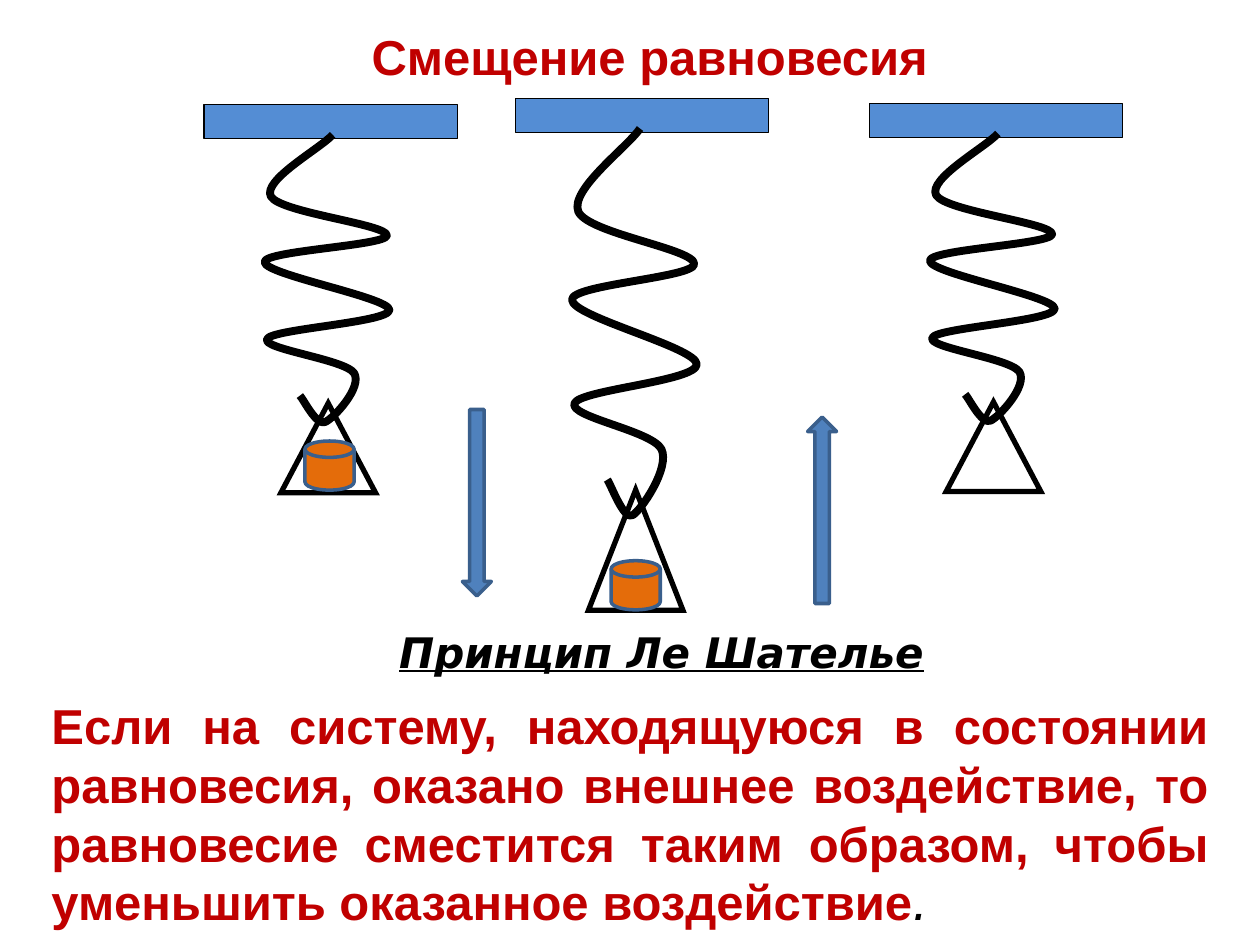
from dataclasses import dataclass

import lxml.etree
import pptx
import pptx.dml.color
import pptx.enum.shapes
import pptx.enum.text
import pptx.oxml.ns
import pptx.util

Inches = pptx.util.Inches
Pt = pptx.util.Pt
qn = pptx.oxml.ns.qn
SHAPE = pptx.enum.shapes.MSO_SHAPE
ALIGN = pptx.enum.text.PP_ALIGN
ANCHOR = pptx.enum.text.MSO_ANCHOR


@dataclass(frozen=True)
class Theme:
    accent: str = "C00000"
    ink: str = "000000"
    beam: str = "548DD4"
    load: str = "E46C0A"
    arrow: str = "4F81BD"
    edge: str = "3A5F8C"
    sans: str = "Arial"
    alternate: str = "DejaVu Sans"
    large: int = 28
    medium: int = 24


THEME = Theme()
SPRING_HEIGHT = 2.31
SPRING_START = (0.31, 2.07)
SPRING_CONTROLS = [
    (0.34, 2.10), (0.44, 2.31), (0.51, 2.28),
    (0.58, 2.25), (0.81, 2.00), (0.74, 1.89),
    (0.66, 1.78), (0.00, 1.70), (0.05, 1.62),
    (0.09, 1.54), (1.02, 1.49), (1.02, 1.39),
    (1.02, 1.29), (0.03, 1.11), (0.03, 1.01),
    (0.02, 0.92), (0.99, 0.88), (1.00, 0.80),
    (1.01, 0.71), (0.16, 0.62), (0.08, 0.49),
    (0.01, 0.36), (0.47, 0.11), (0.57, 0.00),
]


def color(value):
    return pptx.dml.color.RGBColor.from_string(value)


def style(shape, fill, line, width):
    shape.shadow.inherit = False
    if fill:
        shape.fill.solid()
        shape.fill.fore_color.rgb = color(fill)
    else:
        shape.fill.background()
    shape.line.color.rgb = color(line)
    shape.line.width = Pt(width)


def add_figure(shapes, kind, box, fill, line, width):
    figure = shapes.add_shape(kind, *map(Inches, box))
    style(figure, fill, line, width)
    return figure


def sharpen_corners(figure):
    outline = figure.line._get_or_add_ln()
    lxml.etree.SubElement(outline, qn("a:miter"), lim="800000")


def curve_segments(freeform):
    segments = list(freeform._element.iter(qn("a:lnTo")))
    for first in range(0, len(segments), 3):
        curve = lxml.etree.Element(qn("a:cubicBezTo"))
        segments[first].addprevious(curve)
        for segment in segments[first:first + 3]:
            curve.append(segment[0])
            segment.getparent().remove(segment)


def add_spring(shapes, left, top, stretch):
    def place(point):
        return Inches(left + point[0]), Inches(top + point[1] * stretch)

    builder = shapes.build_freeform(*place(SPRING_START))
    builder.add_line_segments(map(place, SPRING_CONTROLS), close=False)
    spring = builder.convert_to_shape()
    curve_segments(spring)
    style(spring, None, THEME.ink, 4.5)


def add_balance(shapes, beam_left, beam_top, spring_left, height, load):
    stretch = height / SPRING_HEIGHT
    spring_top = beam_top + 0.24
    add_figure(shapes, SHAPE.RECTANGLE, (beam_left, beam_top, 2.01, 0.27),
               THEME.beam, THEME.ink, 0.75)
    hanger = shapes.add_group_shape().shapes
    add_spring(hanger, spring_left, spring_top, stretch)
    pan_box = (spring_left + 0.16, spring_top + 2.13 * stretch, 0.75, 0.71 * stretch)
    pan = add_figure(hanger, SHAPE.ISOSCELES_TRIANGLE, pan_box, None, THEME.ink, 3)
    sharpen_corners(pan)
    if load:
        add_figure(shapes, SHAPE.FLOWCHART_MAGNETIC_DISK, (*load, 0.39, 0.39),
                   THEME.load, THEME.edge, 2)


def set_font(font, name, size, ink, bold=False, italic=False, underline=False):
    font.name = name
    font.size = Pt(size)
    font.color.rgb = color(ink)
    font.bold = bold
    font.italic = italic
    font.underline = underline


def place_text(holder, box, anchor, align, indent=0):
    holder.left, holder.top, holder.width, holder.height = map(Inches, box)
    frame = holder.text_frame
    frame.word_wrap = True
    frame.auto_size = pptx.enum.text.MSO_AUTO_SIZE.SHAPE_TO_FIT_TEXT
    frame.vertical_anchor = anchor
    paragraph = frame.paragraphs[0]
    paragraph.alignment = align
    if indent:
        properties = paragraph._p.get_or_add_pPr()
        properties.set("marL", "0")
        properties.set("indent", str(Inches(indent)))
    return paragraph


def add_text(shapes, box, anchor, align, indent=0):
    return place_text(shapes.add_textbox(0, 0, 0, 0), box, anchor, align, indent)


def main():
    deck = pptx.Presentation()
    deck.slide_width, deck.slide_height = Inches(10), Inches(7.5)
    slide = deck.slides.add_slide(deck.slide_layouts[5])
    shapes = slide.shapes

    title = place_text(shapes.title, (0.55, 0.16, 8.83, 0.57),
                       ANCHOR.MIDDLE, ALIGN.CENTER, 0.49)
    title.text = "Смещение равновесия "
    set_font(title.font, THEME.sans, THEME.large, THEME.accent, bold=True)

    for balance in [
        (1.62, 0.83, 2.07, SPRING_HEIGHT, (2.42, 3.50)),
        (4.09, 0.78, 4.51, 3.11, (4.85, 4.45)),
        (6.90, 0.82, 7.35, SPRING_HEIGHT, None),
    ]:
        add_balance(shapes, *balance)

    for direction, left, top in [
        (SHAPE.DOWN_ARROW, 3.67, 3.25),
        (SHAPE.UP_ARROW, 6.41, 3.31),
    ]:
        add_figure(shapes, direction, (left, top, 0.23, 1.48),
                   THEME.arrow, THEME.edge, 2)

    principle = add_text(shapes, (0.59, 4.92, 8.83, 0.51),
                         ANCHOR.MIDDLE, ALIGN.CENTER, 0.49)
    principle.text = "Принцип Ле Шателье"
    set_font(principle.font, THEME.alternate, THEME.medium, THEME.ink,
             bold=True, italic=True, underline=True)

    statement = add_text(shapes, (0.31, 5.47, 9.38, 1.99), ANCHOR.TOP, ALIGN.JUSTIFY)
    wording = statement.add_run()
    wording.text = (
        "Если на систему, находящуюся в состоянии равновесия, оказано внешнее "
        "воздействие, то равновесие сместится таким образом, чтобы уменьшить "
        "оказанное воздействие"
    )
    set_font(wording.font, THEME.sans, THEME.large, THEME.accent, bold=True)
    full_stop = statement.add_run()
    full_stop.text = "."
    set_font(full_stop.font, THEME.alternate, THEME.large, THEME.ink, italic=True)

    deck.save("out.pptx")


if __name__ == "__main__":
    main()
